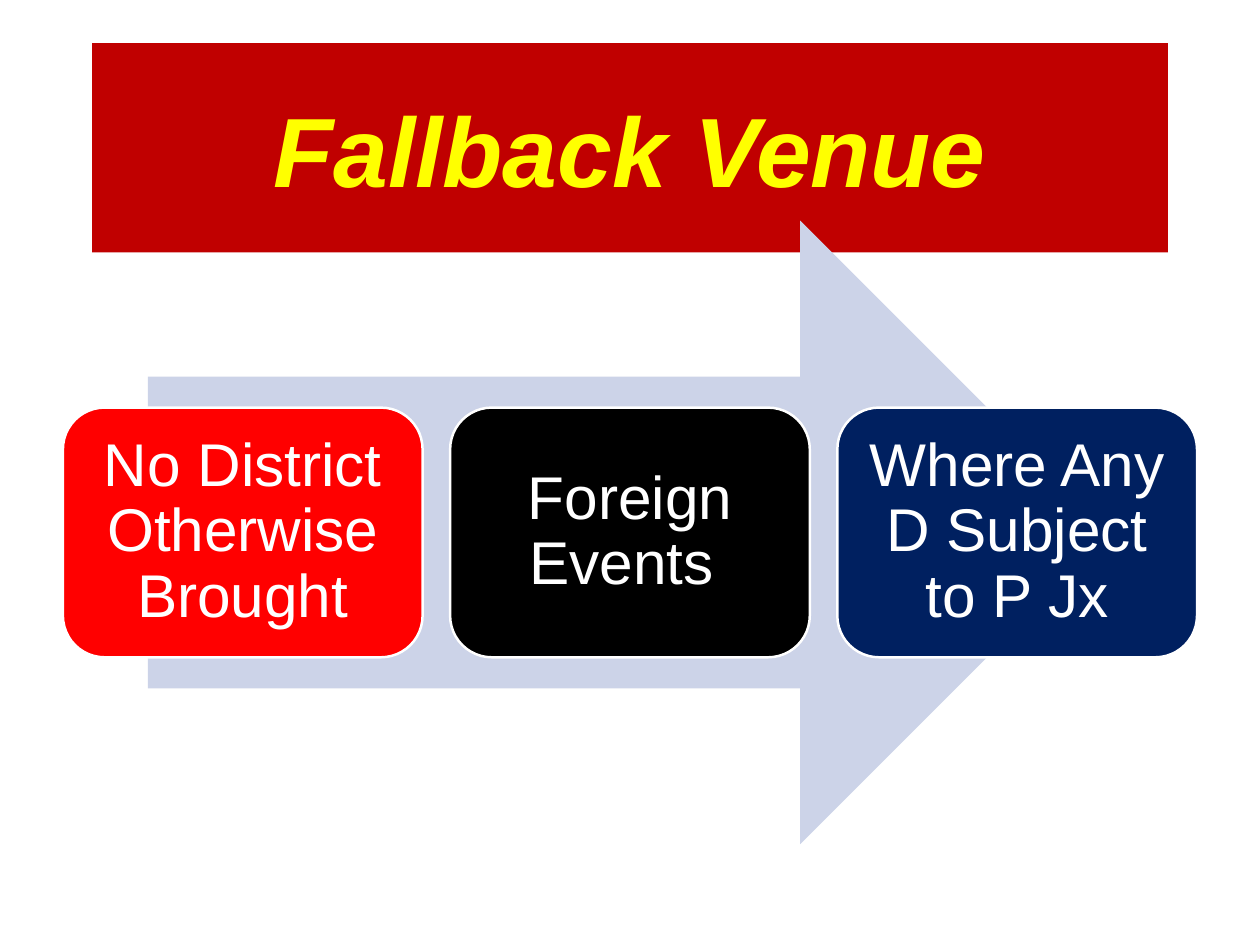
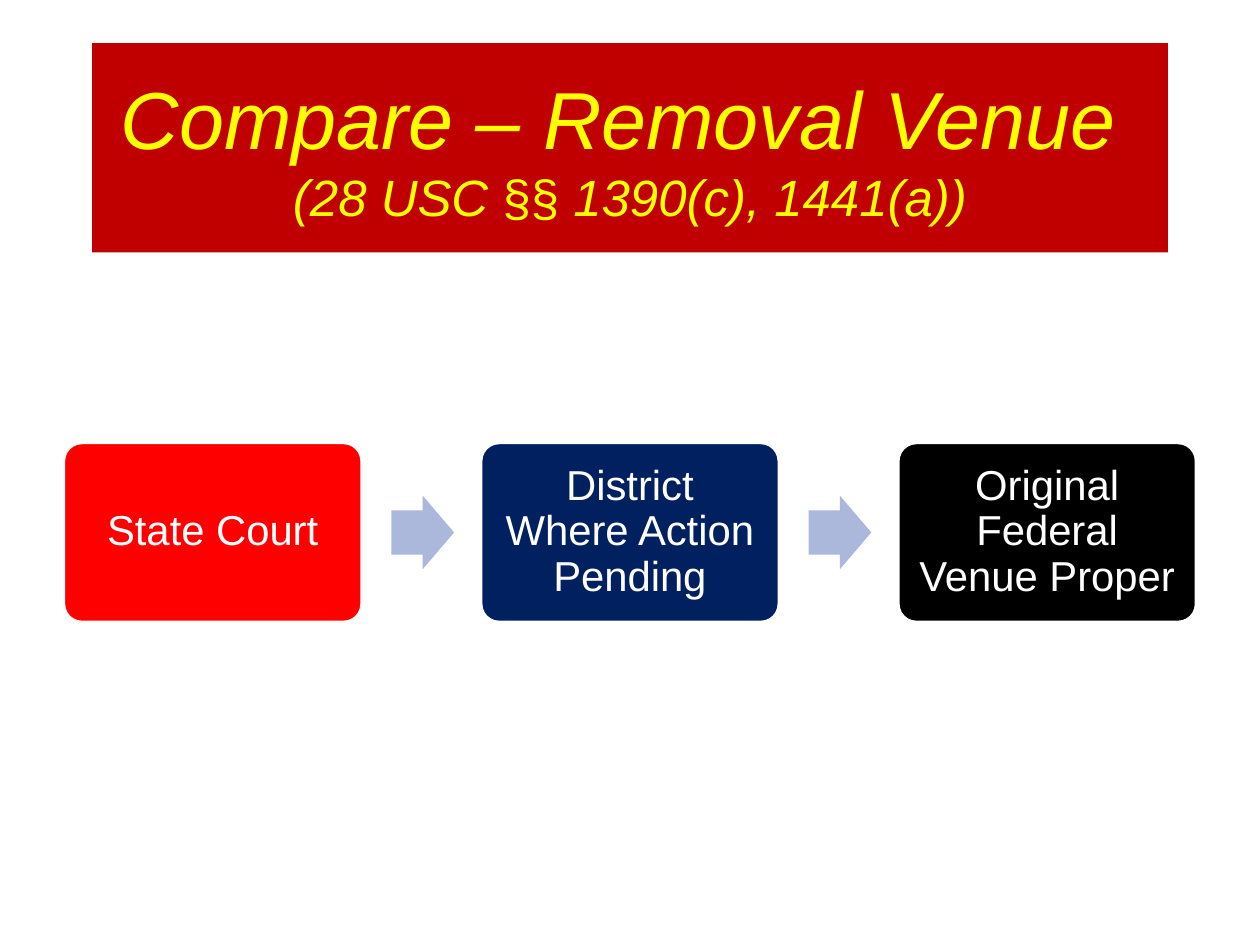
from collections import namedtuple
from dataclasses import dataclass

from pptx import Presentation
from pptx.dml.color import RGBColor
from pptx.enum.shapes import MSO_SHAPE
from pptx.enum.text import MSO_ANCHOR, PP_ALIGN
from pptx.util import Cm, Pt

Box = namedtuple("Box", "left top width height")
Span = namedtuple("Span", "text size bold italic", defaults=(False, True))
Step = namedtuple("Step", "text fill")


@dataclass(frozen=True)
class Theme:
    font: str = "Arial"
    banner: str = "C00000"
    title: str = "FFFF00"
    white: str = "FFFFFF"
    red: str = "FF0000"
    black: str = "000000"
    navy: str = "002060"
    pale_arrow: str = "CCD3E8"
    small_arrow: str = "ABB8DC"
    title_size: float = 80
    long_title_size: float = 65.7
    citation_size: float = 41.4
    large_step_size: float = 49
    step_size: float = 34
    outline: float = 2


THEME = Theme()
PAGE_WIDTH, PAGE_HEIGHT = 36.12, 27.1
BANNER = Box(2.64, 1.24, 30.84, 6)
DIAGRAM = Box(1.8, 6.33, 32.52, 17.88)


def centred(area, width, height):
    return Box(area.left + (area.width - width) / 2,
               area.top + (area.height - height) / 2, width, height)


def add_filled(page, kind, box, fill, outline=None):
    shape = page.shapes.add_shape(kind, *(Cm(length) for length in box))
    shape.shadow.inherit = False
    shape.fill.solid()
    shape.fill.fore_color.rgb = RGBColor.from_string(fill)
    if outline:
        shape.line.color.rgb = RGBColor.from_string(outline)
        shape.line.width = Pt(THEME.outline)
    else:
        shape.line.fill.background()
    return shape


def prepare_text(shape, inset):
    frame = shape.text_frame
    frame.word_wrap = True
    frame.vertical_anchor = MSO_ANCHOR.MIDDLE
    frame.margin_left = frame.margin_right = Cm(inset)
    frame.margin_top = frame.margin_bottom = Cm(inset)
    para = frame.paragraphs[0]
    para.alignment = PP_ALIGN.CENTER
    return para


def format_run(run, size, colour, bold=False, italic=False):
    run.font.name = THEME.font
    run.font.size = Pt(size)
    run.font.color.rgb = RGBColor.from_string(colour)
    run.font.bold = bold
    run.font.italic = italic


def add_title(page, box, lines):
    banner = add_filled(page, MSO_SHAPE.RECTANGLE, box, THEME.banner)
    para = prepare_text(banner, 0.15)
    for number, line in enumerate(lines):
        if number:
            para.add_line_break()
        for span in line:
            run = para.add_run()
            run.text = span.text
            format_run(run, span.size, THEME.title, span.bold, span.italic)


def add_steps(page, area, steps, width, height, pitch, size, inset, corner):
    row = centred(area, width + pitch * (len(steps) - 1), height)
    boxes = [Box(row.left + pitch * index, row.top, width, height)
             for index in range(len(steps))]
    for step, box in zip(steps, boxes):
        shape = add_filled(page, MSO_SHAPE.ROUNDED_RECTANGLE, box, step.fill, THEME.white)
        shape.adjustments[0] = corner
        para = prepare_text(shape, inset)
        para.text = step.text
        para.line_spacing = 0.9
        format_run(para.runs[0], size, THEME.white)
    return boxes


def add_arrow_process(page, area, steps):
    arrow = centred(area, area.width * 0.85, area.height)
    add_filled(page, MSO_SHAPE.RIGHT_ARROW, arrow, THEME.pale_arrow)
    add_steps(page, area, steps, width=10.31, height=7.16, pitch=11.1,
              size=THEME.large_step_size, inset=0.51, corner=0.1667)


def add_linked_process(page, area, steps):
    boxes = add_steps(page, area, steps, width=8.53, height=5.13, pitch=11.96,
                      size=THEME.step_size, inset=0.36, corner=0.1)
    for box in boxes[:-1]:
        place = centred(box, 1.8, 2.11)._replace(left=box.left + box.width * 1.1)
        arrow = add_filled(page, MSO_SHAPE.RIGHT_ARROW, place, THEME.small_arrow)
        arrow.adjustments[0] = 0.6
        arrow.adjustments[1] = 0.5


def add_page(deck, title_lines, add_diagram, steps):
    page = deck.slides.add_slide(deck.slide_layouts[6])
    add_title(page, BANNER, title_lines)
    add_diagram(page, DIAGRAM, steps)


def main():
    deck = Presentation()
    deck.slide_width, deck.slide_height = Cm(PAGE_WIDTH), Cm(PAGE_HEIGHT)
    add_page(deck, [[Span("Fallback Venue", THEME.title_size, bold=True)]],
             add_arrow_process,
             [Step("No District Otherwise Brought", THEME.red),
              Step("Foreign Events ", THEME.black),
              Step("Where Any D Subject to P Jx", THEME.navy)])
    add_page(deck,
             [[Span("Compare – Removal Venue ", THEME.long_title_size)],
              [Span("(28 USC ", THEME.citation_size),
               Span("§§", THEME.citation_size, italic=False),
               Span(" 1390(c), 1441(a))", THEME.citation_size)]],
             add_linked_process,
             [Step("State Court", THEME.red),
              Step("District Where Action Pending", THEME.navy),
              Step("Original Federal Venue Proper", THEME.black)])
    deck.save("out.pptx")


if __name__ == "__main__":
    main()
